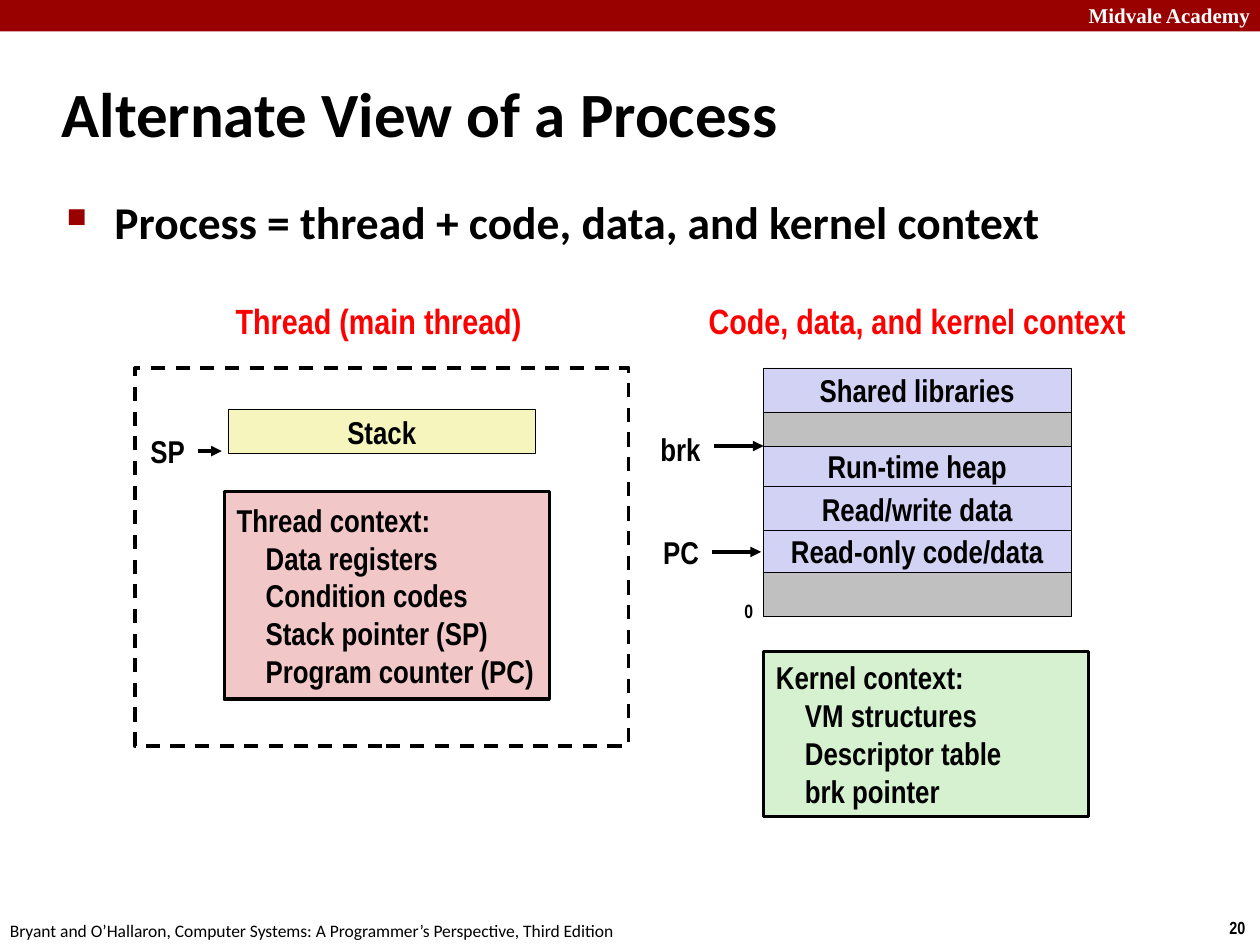
from dataclasses import dataclass
from typing import Optional

from lxml import etree
from pptx import Presentation
from pptx import util as u
from pptx.dml.color import RGBColor
from pptx.enum import dml, shapes, text
from pptx.oxml.ns import qn

COLOURS = {
    "banner": "990000", "white": "FFFFFF", "black": "000000", "heading": "FF0000",
    "memory": "D2D2F4", "unused": "C0C0C0", "stack": "F6F5BD",
    "thread": "F1C7C7", "kernel": "D5F1CF",
}
NARROW, BODY, SERIF = "Arial Narrow", "Calibri", "Times New Roman"
LEFT, CENTER, RIGHT = text.PP_ALIGN.LEFT, text.PP_ALIGN.CENTER, text.PP_ALIGN.RIGHT
TOP, MIDDLE = text.MSO_ANCHOR.TOP, text.MSO_ANCHOR.MIDDLE


@dataclass(frozen=True)
class Area:
    left: float
    top: float
    width: float
    height: float

    def lengths(self) -> list:
        return [u.Inches(v) for v in (self.left, self.top, self.width, self.height)]


@dataclass(frozen=True)
class MemoryRow:
    label: str
    height: float
    fill: str = "memory"


@dataclass(frozen=True)
class Pointer:
    label: str
    label_area: Area
    start: float
    end: float
    y: float


@dataclass(frozen=True)
class ContextBox:
    title: str
    items: tuple
    area: Area
    fill: str


MEMORY_LEFT, MEMORY_TOP, REGION_WIDTH, REGION_HEIGHT = 6.06, 2.92, 2.44, 0.35
MEMORY = (
    MemoryRow("Shared libraries", REGION_HEIGHT),
    MemoryRow("", 0.27, "unused"),
    MemoryRow("Run-time heap", 0.32),
    MemoryRow("Read/write data", REGION_HEIGHT),
    MemoryRow("Read-only code/data", 0.33),
    MemoryRow("", REGION_HEIGHT, "unused"),
)
POINTERS = (
    Pointer("SP", Area(1.09, 3.38, 0.48, 0.4), 1.57, 1.76, 3.58),
    Pointer("PC", Area(5.16, 4.18, 0.49, 0.4), 5.65, 6.04, 4.38),
    Pointer("brk", Area(5.14, 3.36, 0.52, 0.4), 5.67, 6.06, 3.54),
)
CONTEXTS = (
    ContextBox("Thread context:",
               ("Data registers", "Condition codes", "Stack pointer (SP)",
                "Program counter (PC)"),
               Area(1.78, 3.9, 2.58, 1.65), "thread"),
    ContextBox("Kernel context:", ("VM structures", "Descriptor table", "brk pointer"),
               Area(MEMORY_LEFT, 5.17, 2.58, 1.31), "kernel"),
)
HEADINGS = (
    ("Thread (main thread)", Area(1.76, 2.32, 2.49, 0.44)),
    ("Code, data, and kernel context", Area(5.48, 2.32, 3.6, 0.44)),
)


def rgb(name: str) -> RGBColor:
    return RGBColor.from_string(COLOURS[name])


def write(box, *lines: str, size: float = 18, font: str = NARROW, colour: str = "black",
          bold: bool = True, align=CENTER, anchor=MIDDLE, wrap: bool = False,
          item_indent: float = 0) -> None:
    """Fill a shape with one paragraph a line; lines after the first are indented."""
    frame = box.text_frame
    frame.word_wrap = wrap
    frame.vertical_anchor = anchor
    for index, line in enumerate(lines):
        para = frame.add_paragraph() if index else frame.paragraphs[0]
        para.alignment = align
        if index and item_indent:
            para._p.get_or_add_pPr().set("marL", str(u.Inches(item_indent)))
        span = para.add_run()
        span.text = line
        span.font.size = u.Pt(size)
        span.font.name = font
        span.font.bold = bold
        span.font.color.rgb = rgb(colour)


def add_label(page, area: Area, line: str, **style):
    box = page.shapes.add_textbox(*area.lengths())
    write(box, line, **style)
    return box


def add_box(page, area: Area, fill: Optional[str] = None, line_width: float = 0):
    box = page.shapes.add_shape(shapes.MSO_SHAPE.RECTANGLE, *area.lengths())
    box.shadow.inherit = False
    if fill:
        box.fill.solid()
        box.fill.fore_color.rgb = rgb(fill)
    else:
        box.fill.background()
    if line_width:
        box.line.color.rgb = rgb("black")
        box.line.width = u.Pt(line_width)
    else:
        box.line.fill.background()
    return box


def add_bullet(box) -> None:
    props = box.text_frame.paragraphs[0]._p.get_or_add_pPr()
    props.set("marL", str(u.Inches(0.38)))
    props.set("indent", str(u.Inches(-0.38)))
    colour = etree.SubElement(props, qn("a:buClr"))
    etree.SubElement(colour, qn("a:srgbClr"), val=COLOURS["banner"])
    etree.SubElement(props, qn("a:buSzPct"), val="60000")
    etree.SubElement(props, qn("a:buChar"), char="■")


def add_pointer(page, pointer: Pointer) -> None:
    add_label(page, pointer.label_area, pointer.label)
    y = u.Inches(pointer.y)
    arrow = page.shapes.add_connector(
        shapes.MSO_CONNECTOR.STRAIGHT, u.Inches(pointer.start), y, u.Inches(pointer.end), y)
    arrow.line.color.rgb = rgb("black")
    arrow.line.width = u.Pt(2)
    etree.SubElement(arrow.line._get_or_add_ln(), qn("a:tailEnd"), type="triangle")
    etree.SubElement(arrow._element.spPr, qn("a:effectLst"))


def add_memory(page) -> None:
    top = MEMORY_TOP
    for row in MEMORY:
        box = add_box(page, Area(MEMORY_LEFT, top, REGION_WIDTH, row.height), row.fill, 0.25)
        if row.label:
            write(box, row.label)
        top += row.height
    add_label(page, Area(5.81, 4.71, 0.27, 0.29), "0", size=11, align=LEFT, anchor=TOP)


def add_frame_text(page) -> None:
    """Draw the banner, title, bullet line, footer and page number."""
    add_box(page, Area(0, 0, 10, 0.25), "banner")
    add_label(page, Area(8.02, -0.03, 2, 0.3), "Midvale Academy", size=12, font=SERIF,
              colour="white", align=RIGHT, anchor=TOP, wrap=True)
    add_label(page, Area(9.66, 7.23, 0.34, 0.27), "20", size=10, align=LEFT, anchor=TOP)
    add_label(page, Area(-0.02, 7.25, 5.08, 0.27),
              "Bryant and O’Hallaron, Computer Systems: A Programmer’s Perspective, Third Edition",
              size=10, font=BODY, bold=False, align=LEFT, anchor=TOP)
    add_label(page, Area(0.39, 0.48, 8.3, 0.83), "Alternate View of a Process",
              size=36, font=BODY, align=LEFT, wrap=True)
    summary = add_label(page, Area(0.43, 1.49, 8.64, 5.44),
                        "Process = thread + code, data, and kernel context",
                        size=26, font=BODY, align=LEFT, anchor=TOP, wrap=True)
    add_bullet(summary)


def main() -> None:
    deck = Presentation()
    deck.slide_width, deck.slide_height = u.Inches(10), u.Inches(7.5)
    page = deck.slides.add_slide(deck.slide_layouts[6])

    add_frame_text(page)
    for heading, area in HEADINGS:
        add_label(page, area, heading, size=20, colour="heading")
    add_memory(page)
    for context in CONTEXTS:
        box = add_box(page, context.area, context.fill, 2)
        write(box, context.title, *context.items, align=LEFT, item_indent=0.23)
    stack = add_box(page, Area(1.81, 3.25, REGION_WIDTH, REGION_HEIGHT), "stack", 0.25)
    write(stack, "Stack")
    for pointer in POINTERS:
        add_pointer(page, pointer)
    thread = add_box(page, Area(1.07, MEMORY_TOP, 3.92, 3), line_width=2)
    thread.line.dash_style = dml.MSO_LINE.DASH

    deck.save("out.pptx")


if __name__ == "__main__":
    main()
